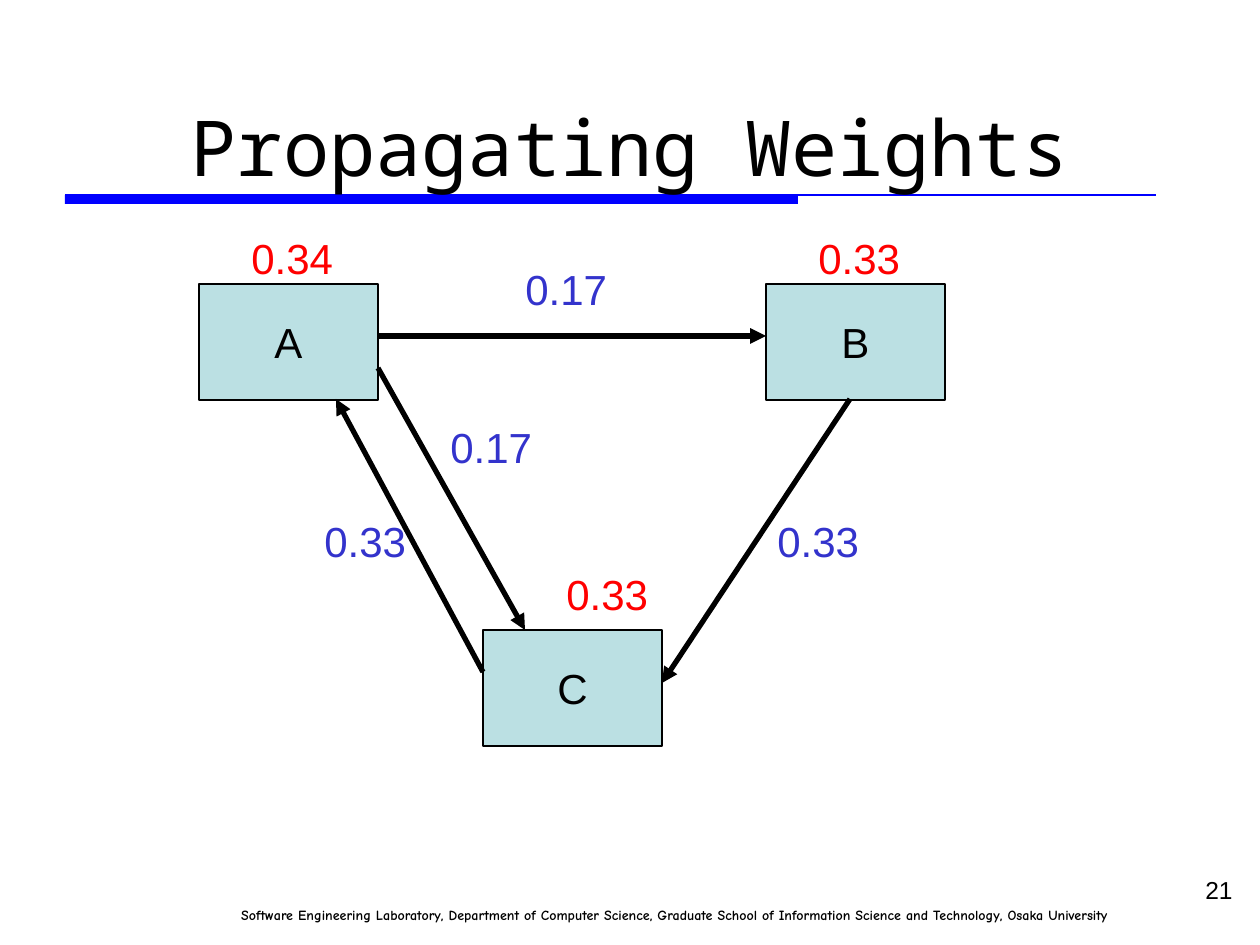
from dataclasses import dataclass

from lxml.etree import SubElement
from pptx import Presentation
from pptx.dml.color import RGBColor
from pptx.enum.shapes import MSO_CONNECTOR as CONN, MSO_SHAPE as SHAPE
from pptx.enum.text import MSO_ANCHOR as ANCHOR, PP_ALIGN as ALIGN
from pptx.oxml.ns import qn
from pptx.util import Emu, Pt

EMU_PER_PX = 914400 / 126
COLORS = {
    "black": "000000",
    "bar": "0000FF",
    "node": "BBE0E3",
    "weight": "FF0000",
    "flow": "3333CC",
}
NODE_W, NODE_H = 179, 116
LABEL_W, LABEL_H = 107, 63


@dataclass
class Node:
    name: str
    x: int
    y: int


@dataclass
class Line:
    x1: int
    y1: int
    x2: int
    y2: int
    color: str = "black"
    width: float = 3
    arrow: bool = True


@dataclass
class Text:
    text: str
    x: int
    y: int
    w: int = LABEL_W
    h: int = LABEL_H
    size: int = 24
    color: str = "black"
    font: str = "Arial"
    align: ALIGN = ALIGN.LEFT
    anchor: ANCHOR = ANCHOR.TOP
    bold: bool = False
    wrap: bool = True


NODES = [Node("A", 199, 284), Node("B", 766, 284), Node("C", 483, 630)]
ARROWS = [
    Line(378, 336, 766, 336),
    Line(850, 399, 662, 683),
    Line(378, 368, 525, 630),
    Line(483, 672, 336, 399),
]
WEIGHTS = [("0.34", 239, 226), ("0.33", 806, 226), ("0.33", 554, 562)]
FLOWS = [("0.17", 513, 257), ("0.17", 438, 415), ("0.33", 765, 509), ("0.33", 312, 509)]
FOOTER = Text(
    "Software Engineering Laboratory, Department of Computer Science, "
    "Graduate School of Information Science and Technology, Osaka University",
    105, 900, 1017, 29, 8, font="Comic Neue", align=ALIGN.RIGHT, bold=True,
)
PAGE = Text("21", 951, 869, 294, 30, 14, align=ALIGN.RIGHT)
TITLE = Text(
    "Propagating Weights", 63, 96, 1134, 100, 44,
    font="Noto Sans Mono", align=ALIGN.CENTER, anchor=ANCHOR.MIDDLE,
)


def px(n: int) -> Emu:
    return Emu(round(n * EMU_PER_PX))


def rgb(name: str) -> RGBColor:
    return RGBColor.from_string(COLORS[name])


def write(tf, t: Text) -> None:
    tf.word_wrap = t.wrap
    tf.vertical_anchor = t.anchor
    p = tf.paragraphs[0]
    p.alignment = t.align
    r = p.add_run()
    r.text = t.text
    r.font.size = Pt(t.size)
    r.font.name = t.font
    r.font.bold = t.bold
    r.font.color.rgb = rgb(t.color)


def add_text(s, t: Text) -> None:
    sp = s.shapes.add_textbox(px(t.x), px(t.y), px(t.w), px(t.h))
    write(sp.text_frame, t)


def add_rect(s, x: int, y: int, w: int, h: int, fill: str):
    sp = s.shapes.add_shape(SHAPE.RECTANGLE, px(x), px(y), px(w), px(h))
    sp.shadow.inherit = False
    sp.fill.solid()
    sp.fill.fore_color.rgb = rgb(fill)
    sp.line.fill.background()
    return sp


def add_node(s, n: Node) -> None:
    sp = add_rect(s, n.x, n.y, NODE_W, NODE_H, "node")
    sp.line.color.rgb = rgb("black")
    sp.line.width = Pt(0.75)
    write(sp.text_frame, Text(n.name, n.x, n.y, align=ALIGN.CENTER,
                              anchor=ANCHOR.MIDDLE, wrap=False))


def add_line(s, ln: Line) -> None:
    c = s.shapes.add_connector(CONN.STRAIGHT, px(ln.x1), px(ln.y1), px(ln.x2), px(ln.y2))
    c.line.color.rgb = rgb(ln.color)
    c.line.width = Pt(ln.width)
    if ln.arrow:
        SubElement(c.line._get_or_add_ln(), qn("a:tailEnd"), type="triangle")
    SubElement(c._element.spPr, qn("a:effectLst"))


def main() -> None:
    prs = Presentation()
    prs.slide_width, prs.slide_height = px(1260), px(945)
    s = prs.slides.add_slide(prs.slide_layouts[6])

    add_text(s, FOOTER)
    add_rect(s, 65, 195, 733, 9, "bar")
    add_line(s, Line(65, 195, 1156, 195, "bar", 0.75, False))
    add_text(s, PAGE)
    add_text(s, TITLE)
    for n in NODES:
        add_node(s, n)
    for ln in ARROWS:
        add_line(s, ln)
    for color, labels in (("weight", WEIGHTS), ("flow", FLOWS)):
        for value, x, y in labels:
            add_text(s, Text(value, x, y, color=color, wrap=False))

    prs.save("out.pptx")


if __name__ == "__main__":
    main()
